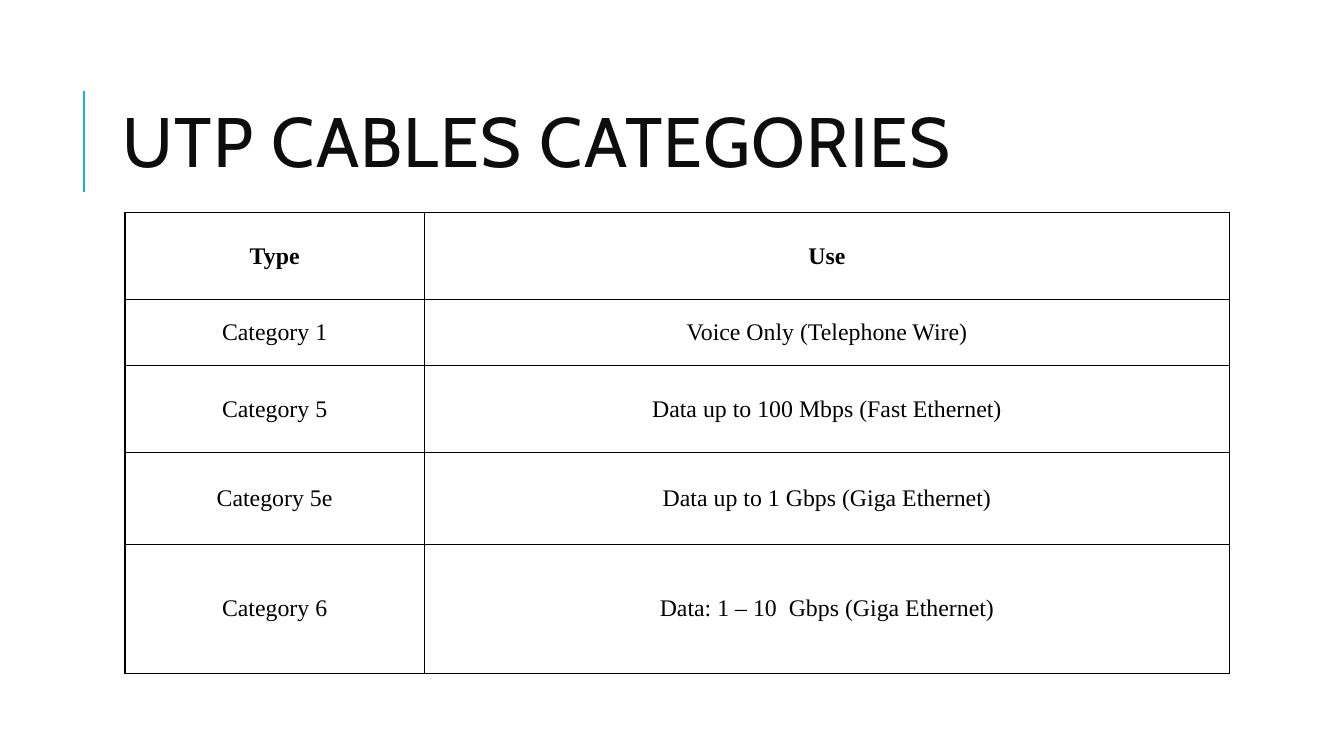
from dataclasses import dataclass

from lxml import etree
from pptx import Presentation
from pptx.dml.color import RGBColor
from pptx.enum.shapes import MSO_CONNECTOR
from pptx.enum.text import MSO_ANCHOR, PP_ALIGN
from pptx.oxml.ns import qn
from pptx.util import Pt

STRAIGHT = MSO_CONNECTOR.STRAIGHT
MIDDLE = MSO_ANCHOR.MIDDLE
CENTER = PP_ALIGN.CENTER


@dataclass(frozen=True)
class Theme:
    accent: str = "1CADE4"
    title_color: str = "0D0D0D"
    ink: str = "000000"
    title_font: str = "Cabin"
    table_font: str = "Times New Roman"
    title_size: float = 50
    table_size: float = 17
    accent_width: float = 1.5
    border_width: float = 1


THEME = Theme()

COLUMN_WIDTHS = (213.84, 575.28)
ROW_HEIGHTS = (61.92, 47.52, 61.92, 65.52, 92.16)
CATEGORIES = (
    ("Type", "Use"),
    ("Category 1", "Voice Only (Telephone Wire)"),
    ("Category 5", "Data up to 100 Mbps (Fast Ethernet)"),
    ("Category 5e", "Data up to 1 Gbps (Giga Ethernet)"),
    ("Category 6", "Data: 1 – 10  Gbps (Giga Ethernet)"),
)


def style_font(font, name, size, color, bold=False):
    font.name = name
    font.size = Pt(size)
    font.bold = bold
    font.color.rgb = RGBColor.from_string(color)


def add_accent_line(slide, x, top, bottom):
    accent = slide.shapes.add_connector(STRAIGHT, Pt(x), Pt(bottom), Pt(x), Pt(top))
    accent.line.color.rgb = RGBColor.from_string(THEME.accent)
    accent.line.width = Pt(THEME.accent_width)
    etree.SubElement(accent._element.spPr, qn("a:effectLst"))


def add_title(slide, text, left, top, width, height):
    frame = slide.shapes.add_textbox(Pt(left), Pt(top), Pt(width), Pt(height)).text_frame
    frame.word_wrap = True
    frame.vertical_anchor = MIDDLE
    heading = frame.paragraphs[0]
    heading.line_spacing = 0.8
    run = heading.add_run()
    run.text = text
    style_font(heading.font, THEME.title_font, THEME.title_size, THEME.title_color)
    run.font._element.set("spc", "100")  # letter spacing, hundredths of a point


def add_borders(cell):
    properties = cell._tc.get_or_add_tcPr()
    for side in ("a:lnL", "a:lnR", "a:lnT", "a:lnB"):
        border = etree.SubElement(properties, qn(side), w=str(Pt(THEME.border_width)))
        fill = etree.SubElement(border, qn("a:solidFill"))
        etree.SubElement(fill, qn("a:srgbClr"), val=THEME.ink)


def fill_cell(cell, text, bold):
    cell.text = text
    cell.vertical_anchor = MIDDLE
    label = cell.text_frame.paragraphs[0]
    label.alignment = CENTER
    style_font(label.font, THEME.table_font, THEME.table_size, THEME.ink, bold)
    add_borders(cell)
    cell.fill.background()


def add_category_table(slide, left, top):
    table = slide.shapes.add_table(
        len(ROW_HEIGHTS), len(COLUMN_WIDTHS), Pt(left), Pt(top),
        Pt(sum(COLUMN_WIDTHS)), Pt(sum(ROW_HEIGHTS)),
    ).table
    table.horz_banding = False
    for column, width in zip(table.columns, COLUMN_WIDTHS):
        column.width = Pt(width)
    for row, height in zip(table.rows, ROW_HEIGHTS):
        row.height = Pt(height)
    for r, entry in enumerate(CATEGORIES):
        for c, text in enumerate(entry):
            fill_cell(table.cell(r, c), text, bold=r == 0)


def main():
    presentation = Presentation()
    presentation.slide_width = Pt(960)
    presentation.slide_height = Pt(540)
    slide = presentation.slides.add_slide(presentation.slide_layouts[6])
    add_accent_line(slide, x=60, top=65, bottom=137)
    add_title(slide, "UTP CABLES CATEGORIES", 80.64, 46.08, 765.36, 118.08)
    add_category_table(slide, left=89.28, top=151.92)
    presentation.save("out.pptx")


if __name__ == "__main__":
    main()
